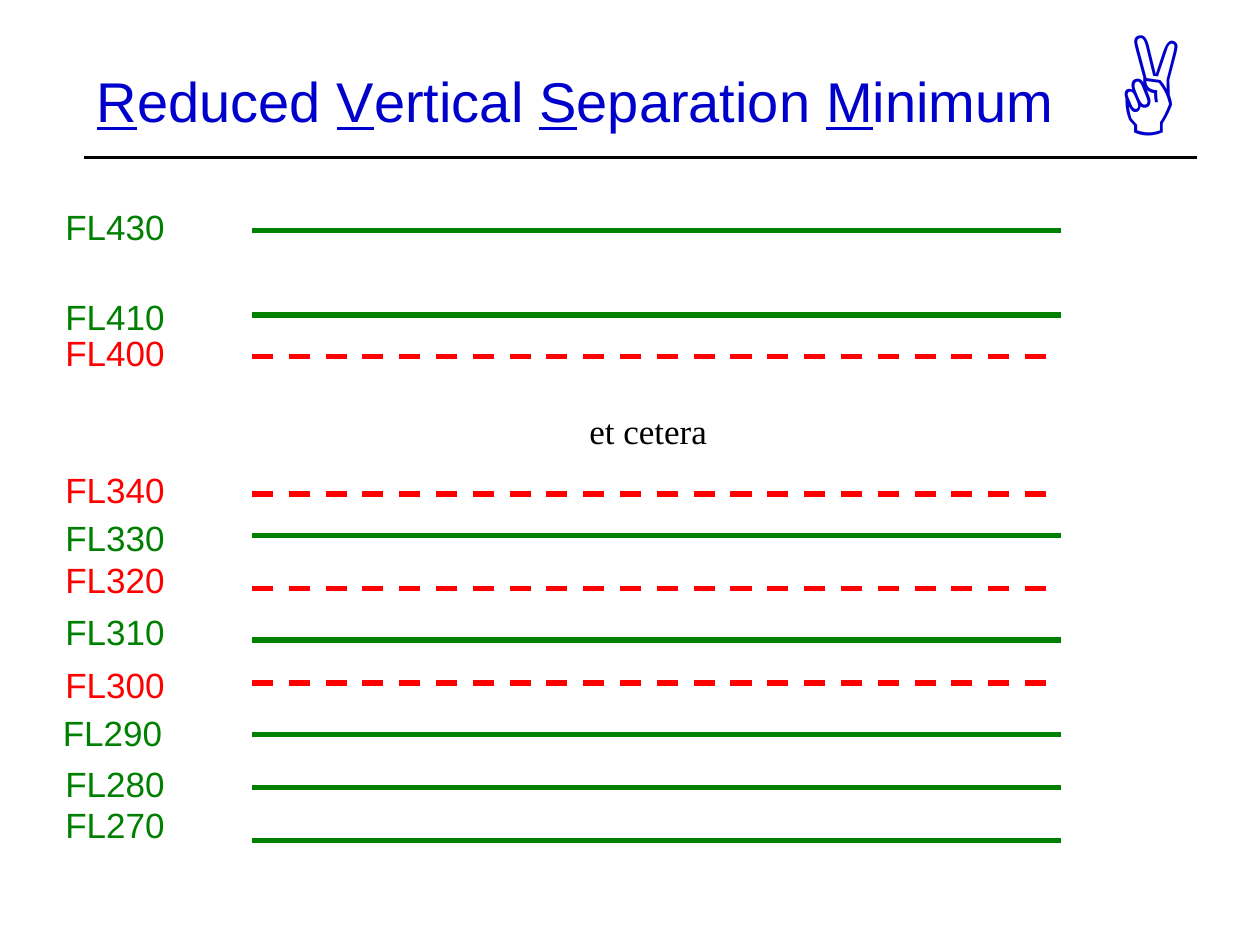
from dataclasses import dataclass

from lxml.etree import SubElement
from pptx import Presentation
from pptx.dml.color import RGBColor
from pptx.enum.dml import MSO_LINE
from pptx.enum.shapes import MSO_CONNECTOR
from pptx.enum.text import MSO_ANCHOR, MSO_AUTO_SIZE
from pptx.oxml.ns import qn
from pptx.util import Inches, Pt


@dataclass(frozen=True)
class Theme:
    blue: RGBColor = RGBColor(0x00, 0x00, 0xCC)
    green: RGBColor = RGBColor(0x00, 0x80, 0x00)
    red: RGBColor = RGBColor(0xFF, 0x00, 0x00)
    black: RGBColor = RGBColor(0x00, 0x00, 0x00)
    sans: str = "Arial"
    serif: str = "Times New Roman"
    title_size: int = 32
    body_size: int = 20
    symbol_size: int = 72
    rule_width: int = 2
    level_width: int = 3


class SlideBuilder:
    def __init__(self, slide, theme):
        self.slide = slide
        self.theme = theme

    def text_box(self, left, top, width, height, wrap):
        shape = self.slide.shapes.add_textbox(
            Inches(left), Inches(top), Inches(width), Inches(height)
        )
        shape.text_frame.word_wrap = wrap
        return shape.text_frame

    def style(self, run, font, size, color):
        run.font.name = font
        run.font.size = Pt(size)
        run.font.color.rgb = color

    def text(self, text, left, top, width, height, font, size, color, wrap=False):
        text_frame = self.text_box(left, top, width, height, wrap)
        text_frame.auto_size = MSO_AUTO_SIZE.SHAPE_TO_FIT_TEXT
        text_frame.text = text
        self.style(text_frame.paragraphs[0].runs[0], font, size, color)

    def title(self, text, left, top, width, height):
        text_frame = self.text_box(left, top, width, height, True)
        text_frame.vertical_anchor = MSO_ANCHOR.MIDDLE
        paragraph = text_frame.paragraphs[0]
        words = text.split()
        for index, word in enumerate(words):
            space = " " if index < len(words) - 1 else ""
            for part, underline in ((word[0], True), (word[1:] + space, False)):
                run = paragraph.add_run()
                run.text = part
                self.style(run, self.theme.sans, self.theme.title_size, self.theme.blue)
                run.font.underline = underline

    def line(self, left, right, y, color, width, dashed=False):
        connector = self.slide.shapes.add_connector(
            MSO_CONNECTOR.STRAIGHT, Inches(left), Inches(y), Inches(right), Inches(y)
        )
        connector.line.color.rgb = color
        connector.line.width = Pt(width)
        if dashed:
            connector.line.dash_style = MSO_LINE.DASH
        SubElement(connector.element.spPr, qn("a:effectLst"))

    def flight_level(self, level, label_left, label_top, line_y, is_new):
        theme = self.theme
        color = theme.red if is_new else theme.green
        self.line(2, 8.42, line_y, color, theme.level_width, dashed=is_new)
        self.text(f"FL{level}", label_left, label_top, 0.99, 0.43,
                  theme.sans, theme.body_size, color)


FLIGHT_LEVELS = (
    (430, 0.42, 1.58, 1.83, False),
    (410, 0.42, 2.3, 2.5, False),
    (400, 0.42, 2.58, 2.83, True),
    (340, 0.42, 3.67, 3.92, True),
    (330, 0.42, 4.05, 4.25, False),
    (320, 0.42, 4.38, 4.67, True),
    (310, 0.42, 4.8, 5.08, False),
    (300, 0.42, 5.22, 5.42, True),
    (290, 0.4, 5.6, 5.83, False),
    (280, 0.42, 6, 6.25, False),
    (270, 0.42, 6.33, 6.67, False),
)


def main():
    presentation = Presentation()
    presentation.slide_width = Inches(10)
    presentation.slide_height = Inches(7.5)
    slide = presentation.slides.add_slide(presentation.slide_layouts[6])
    theme = Theme()
    builder = SlideBuilder(slide, theme)

    builder.title("Reduced Vertical Separation Minimum", 0.67, 0.17, 8.5, 1.25)
    builder.line(0.67, 9.5, 1.25, theme.black, theme.rule_width)
    builder.text("✌", 8.75, 0, 1.17, 1.3, theme.serif, theme.symbol_size,
                 theme.blue, wrap=True)
    for flight_level in FLIGHT_LEVELS:
        builder.flight_level(*flight_level)
    builder.text("et cetera", 4.58, 3.2, 1.3, 0.43, theme.serif, theme.body_size,
                 theme.black, wrap=True)

    presentation.save("out.pptx")


if __name__ == "__main__":
    main()
